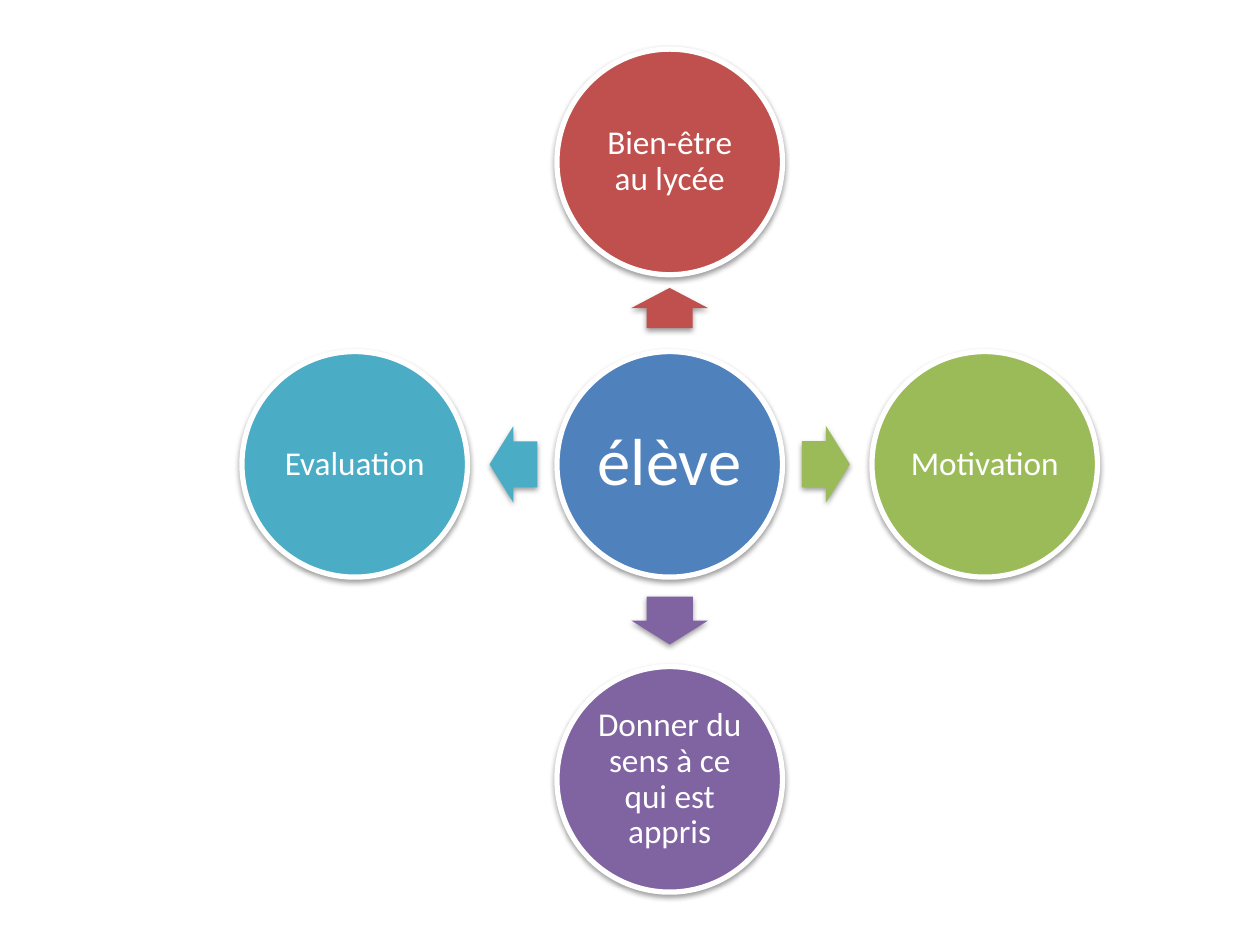
from lxml import etree
from pptx import Presentation
from pptx.dml.color import RGBColor
from pptx.enum.shapes import MSO_SHAPE
from pptx.enum.text import MSO_ANCHOR, PP_ALIGN
from pptx.oxml import parse_xml
from pptx.util import Inches, Pt

OVAL = MSO_SHAPE.OVAL
ARROW = MSO_SHAPE.RIGHT_ARROW
MIDDLE = MSO_ANCHOR.MIDDLE
CENTER = PP_ALIGN.CENTER

WHITE = "FFFFFF"
DIAMETER = 1.79
ARROW_WIDTH = 0.61
ARROW_DISTANCE = 1.24
SHADOW = (
    '<a:effectLst xmlns:a="http://schemas.openxmlformats.org/drawingml/2006/main">'
    '<a:outerShdw blurRad="40000" dist="20000" dir="5400000" rotWithShape="0">'
    '<a:srgbClr val="000000"><a:alpha val="38000"/></a:srgbClr>'
    "</a:outerShdw></a:effectLst>"
)
# label, colour, direction x, direction y, distance, arrow length, rotation
BRANCHES = [
    ("Bien-être au lycée", "C0504D", 0, -1, 2.4, 0.32, 270),
    ("Motivation", "9BBB59", 1, 0, 2.5, 0.38, 0),
    ("Donner du sens à ce qui est appris", "8064A2", 0, 1, 2.5, 0.38, 90),
    ("Evaluation", "4BACC6", -1, 0, 2.5, 0.38, 180),
]


def color(hex_string):
    """Return the colour for a hex string."""
    return RGBColor.from_string(hex_string)


def add_solid(page, kind, x, y, width, height, fill):
    """Add a filled preset shape centred on a point."""
    shape = page.shapes.add_shape(
        kind, Inches(x - width / 2), Inches(y - height / 2), Inches(width), Inches(height)
    )
    shape.fill.solid()
    shape.fill.fore_color.rgb = color(fill)
    shape.line.fill.background()
    return shape


def add_shadow(shape):
    """Give a shape a soft shadow below it."""
    properties = shape.fill._xPr
    for effects in properties.findall("{*}effectLst"):
        properties.remove(effects)
    properties.append(parse_xml(SHADOW))


def add_circle(page, x, y, label, fill, size, inset):
    """Add a labelled circle with a white rim."""
    circle = add_solid(page, OVAL, x, y, DIAMETER, DIAMETER, fill)
    circle.line.color.rgb = color(WHITE)
    circle.line.width = Pt(3)
    add_shadow(circle)
    frame = circle.text_frame
    frame.word_wrap = True
    frame.vertical_anchor = MIDDLE
    frame.margin_left = frame.margin_right = Inches(inset)
    frame.margin_top = frame.margin_bottom = Inches(inset)
    para = frame.paragraphs[0]
    para.text = label
    para.alignment = CENTER
    para.line_spacing = 0.9
    para.font.name = "Calibri"
    para.font.size = Pt(size)
    para.font.color.rgb = color(WHITE)


def add_arrow(page, x, y, length, rotation, fill):
    """Add a block arrow turned to its direction."""
    arrow = add_solid(page, ARROW, x, y, length, ARROW_WIDTH, fill)
    arrow.adjustments[0] = 0.6
    arrow.adjustments[1] = 0.5
    arrow.rotation = rotation
    add_shadow(arrow)


def add_radial_diagram(page, x, y):
    """Draw the hub and its branches around a centre point."""
    add_circle(page, x, y, "élève", "4F81BD", 38, 0.05)
    for label, fill, dx, dy, distance, length, rotation in BRANCHES:
        arrow_x, arrow_y = x + dx * ARROW_DISTANCE, y + dy * ARROW_DISTANCE
        add_arrow(page, arrow_x, arrow_y, length, rotation, fill)
        add_circle(page, x + dx * distance, y + dy * distance, label, fill, 19, 0.03)


def main():
    """Build and save the deck."""
    deck = Presentation()
    deck.slide_width = Inches(10)
    deck.slide_height = Inches(7.5)
    page = deck.slides.add_slide(deck.slide_layouts[6])
    add_radial_diagram(page, 5.315, 3.685)
    deck.save("out.pptx")


if __name__ == "__main__":
    main()
